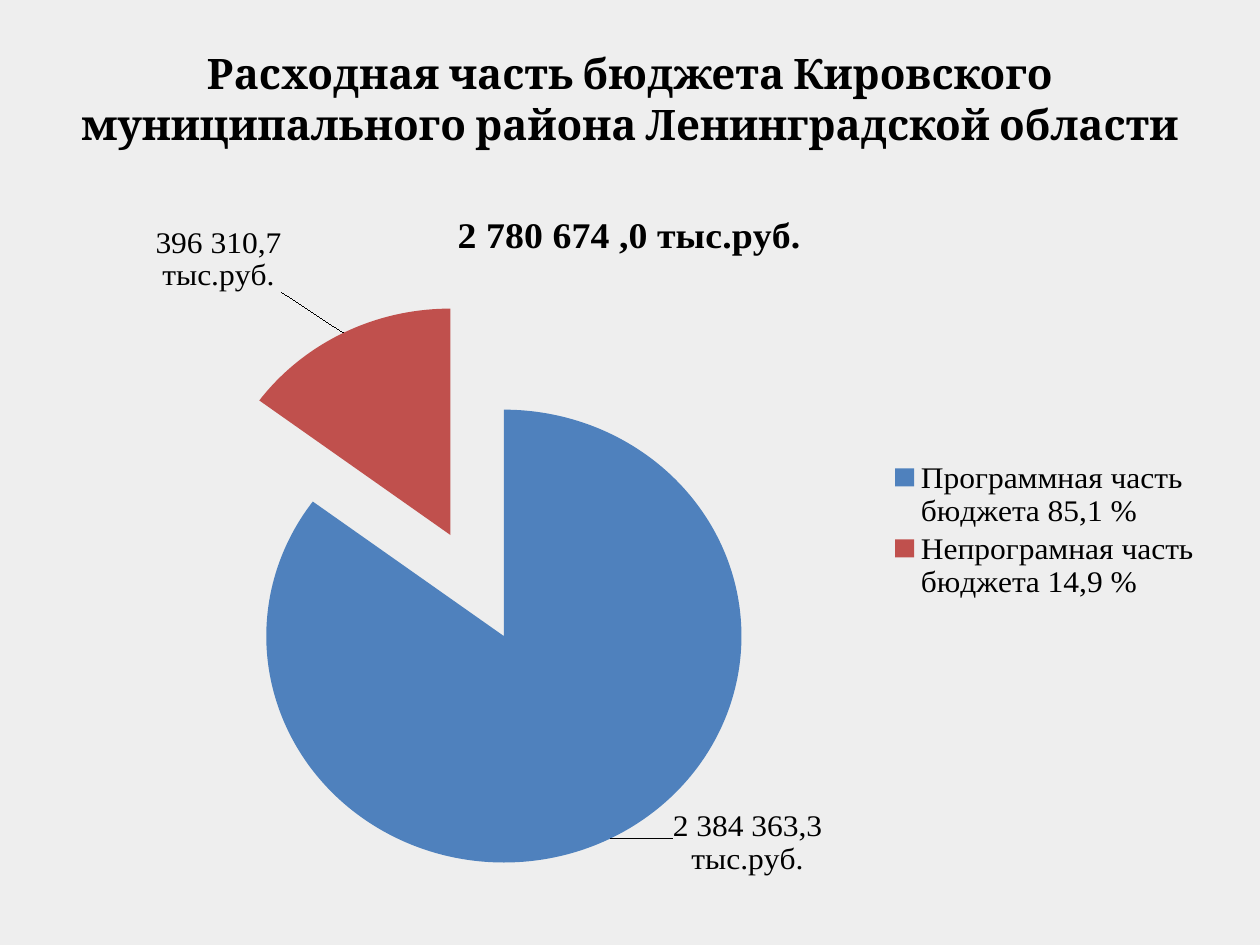
from lxml.etree import SubElement
from pptx import Presentation
from pptx.chart.data import CategoryChartData
from pptx.dml.color import RGBColor
from pptx.enum.chart import XL_CHART_TYPE, XL_LABEL_POSITION, XL_LEGEND_POSITION
from pptx.enum.text import MSO_ANCHOR, PP_ALIGN
from pptx.oxml.ns import qn
from pptx.util import Inches, Pt

# Content
TITLE = "Расходная часть бюджета Кировского муниципального района Ленинградской области"
TOTAL = "2 780 674 ,0 тыс.руб."
# category, value, label, colour, label shift (share of chart width, height)
SLICES = [
    ("Программная часть бюджета 85,1 %", 2345.1, "2 384 363,3 тыс.руб.", "4F81BD", (0.05, -0.04)),
    ("Непрограмная часть бюджета 14,9 %", 409.7, "396 310,7 тыс.руб.", "C0504D", (-0.05, -0.05)),
]
PLOT_AREA = {"x": 0.06, "y": 0.17, "w": 0.62, "h": 0.82}
EXPLOSION = 25


def rgb(value):
    return RGBColor.from_string(value)


def style(font, name, size, bold=False):
    font.name, font.size, font.bold = name, Pt(size), bold
    font.color.rgb = rgb("000000")


def manual_layout(layout, values):
    manual = SubElement(layout, qn("c:manualLayout"))
    for tag, value in values:
        SubElement(manual, qn(f"c:{tag}")).set("val", str(value))


prs = Presentation()
prs.slide_width, prs.slide_height = Inches(10), Inches(7.5)
s = prs.slides.add_slide(prs.slide_layouts[5])
s.background.fill.solid()
s.background.fill.fore_color.rgb = rgb("EEEEEE")

# Title
title = s.shapes.title
title.left, title.top = Inches(0.5), Inches(0.13)
title.width, title.height = Inches(9), Inches(1.1)
tf = title.text_frame
tf.text = TITLE
tf.word_wrap = True
tf.vertical_anchor = MSO_ANCHOR.BOTTOM
p = tf.paragraphs[0]
p.alignment = PP_ALIGN.CENTER
style(p.runs[0].font, "Cambria", 24, True)

# Pie chart
data = CategoryChartData()
data.categories = [row[0] for row in SLICES]
data.add_series("Series 1", [row[1] for row in SLICES])
chart = s.shapes.add_chart(XL_CHART_TYPE.PIE, Inches(0.35), Inches(1.47),
                           Inches(9.29), Inches(5.75), data).chart
style(chart.font, "Times New Roman", 18)
chart.has_title = True
chart.chart_title.text_frame.text = TOTAL
style(chart.chart_title.text_frame.paragraphs[0].runs[0].font, "Times New Roman", 21.6, True)
chart.chart_title.include_in_layout = False

chart.has_legend = True
chart.legend.position = XL_LEGEND_POSITION.RIGHT
chart.legend.include_in_layout = False
style(chart.legend.font, "Times New Roman", 18)

# Plot area position
plot_area = chart.plots[0]._element.getparent()
layout = plot_area.find(qn("c:layout"))
if layout is None:
    layout = SubElement(plot_area, qn("c:layout"))
    plot_area.insert(0, layout)
manual_layout(layout, [("layoutTarget", "inner"), ("xMode", "edge"), ("yMode", "edge"),
                       *PLOT_AREA.items()])

# Slices and their labels
plot = chart.plots[0]
plot.vary_by_categories = True
series = plot.series[0]
series.format.line.fill.background()
explosion = SubElement(series._element, qn("c:explosion"))
explosion.set("val", str(EXPLOSION))
series._element.find(qn("c:spPr")).addnext(explosion)
series.data_labels.show_value = True
for i, (_, _, text, color, shift) in enumerate(SLICES):
    point = series.points[i]
    point.format.fill.solid()
    point.format.fill.fore_color.rgb = rgb(color)
    label = point.data_label
    label.text_frame.text = text
    style(label.text_frame.paragraphs[0].runs[0].font, "Times New Roman", 18)
    label.position = XL_LABEL_POSITION.OUTSIDE_END

for d_lbl, row in zip(series._element.iter(qn("c:dLbl")), SLICES):
    layout = SubElement(d_lbl, qn("c:layout"))
    d_lbl.find(qn("c:idx")).addnext(layout)
    manual_layout(layout, zip("xy", row[4]))

prs.save("out.pptx")
